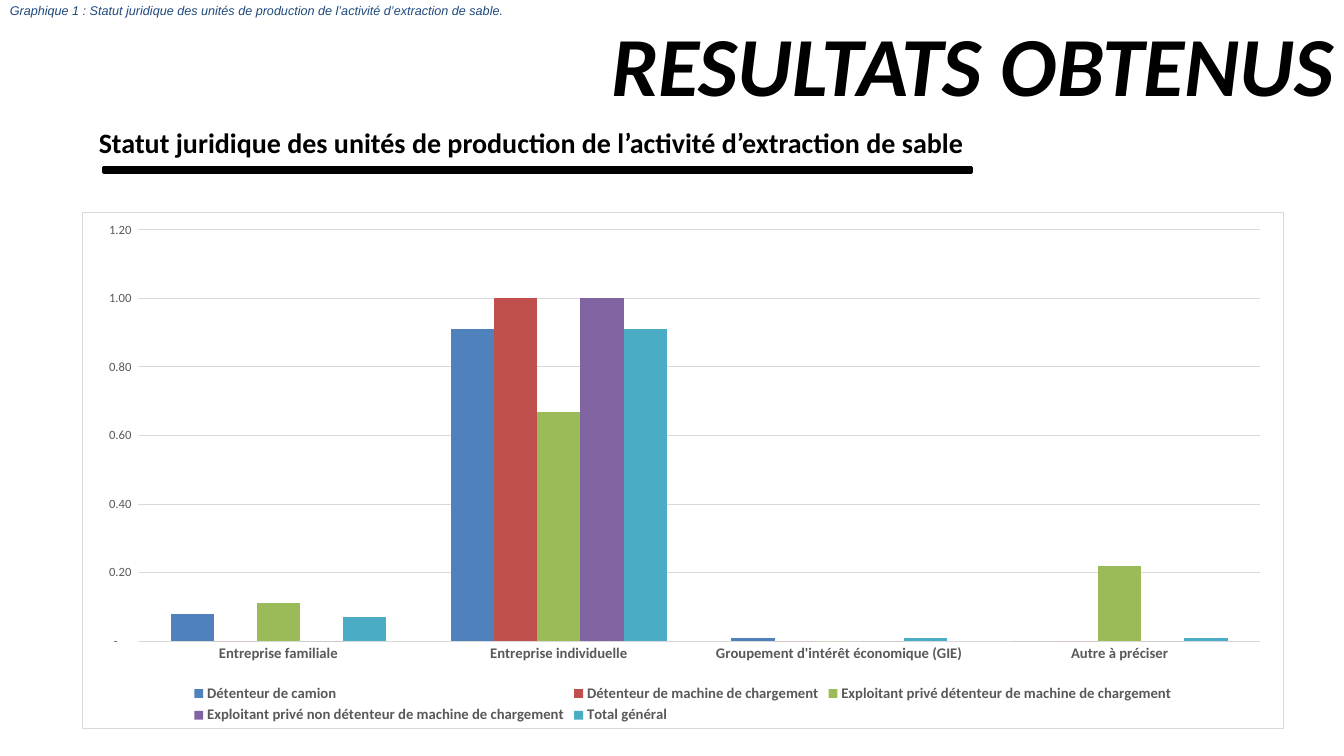
"""Build the slide on the legal status of sand extraction units."""
import pptx
import pptx.util
import pptx.oxml
import pptx.chart.data
import pptx.dml.color
import pptx.enum.chart
import pptx.enum.shapes
import pptx.enum.text

Pt = pptx.util.Pt
Inches = pptx.util.Inches
RGB = pptx.dml.color.RGBColor
Anchor = pptx.enum.text.MSO_ANCHOR
Align = pptx.enum.text.PP_ALIGN

BLACK = RGB(0, 0, 0)
NAVY = RGB(0x1F, 0x49, 0x7D)
GRAY = RGB(0x59, 0x59, 0x59)
PALE = RGB(0xD9, 0xD9, 0xD9)
BLUE = RGB(0x4F, 0x81, 0xBD)
RED = RGB(0xC0, 0x50, 0x4D)
GREEN = RGB(0x9B, 0xBB, 0x59)
PLUM = RGB(0x80, 0x64, 0xA2)
TEAL = RGB(0x4B, 0xAC, 0xC6)

deck = pptx.Presentation()
deck.slide_width = Inches(13.33)
deck.slide_height = Inches(7.5)
slide = deck.slides.add_slide(deck.slide_layouts[6])
shapes = slide.shapes
left = Inches(0.81)


def style(font, size, color, bold=False, italic=False, name="Calibri"):
    font.name, font.size = name, Pt(size)
    font.bold, font.italic = bold, italic
    font.color.rgb = color


def label(text, box, pad, anchor, align, *look):
    frame = shapes.add_textbox(*box).text_frame
    frame.word_wrap = True
    frame.vertical_anchor = anchor
    frame.margin_left = frame.margin_right = Inches(pad)
    frame.margin_top = frame.margin_bottom = 0
    line = frame.paragraphs[0]
    line.alignment = align
    run = line.add_run()
    run.text = text
    style(run.font, *look)


topic = "Statut juridique des unités de production de l’activité d’extraction de sable"
label("RESULTATS OBTENUS", (left, Inches(0.2), deck.slide_width - left, Inches(0.85)),
      0.1, Anchor.MIDDLE, Align.RIGHT, 60, BLACK, True, True)
label(topic, (Inches(0.98), Inches(1.24), Inches(8.66), Inches(0.34)),
      0, Anchor.MIDDLE, Align.LEFT, 20, BLACK, True)
label(f"Graphique 1\u00a0: {topic}.", (0, Inches(0.03), deck.slide_width, Inches(0.15)),
      0.1, Anchor.TOP, Align.LEFT, 9, NAVY, False, True, "Arial")

bar = shapes.add_shape(pptx.enum.shapes.MSO_SHAPE.RECTANGLE,
                       Inches(1.03), Inches(1.66), Inches(8.61), Inches(0.05))
bar.shadow.inherit = False
bar.fill.solid()
bar.fill.fore_color.rgb = BLACK
bar.line.color.rgb = BLACK
bar.line.width = Pt(2)

series = [
    ("Détenteur de camion", (0.08, 0.91, 0.01, 0), BLUE),
    ("Détenteur de machine de chargement", (0, 1, 0, 0), RED),
    ("Exploitant privé détenteur de machine de chargement", (0.11, 0.67, 0, 0.22), GREEN),
    ("Exploitant privé non détenteur de machine de chargement", (0, 1, 0, 0), PLUM),
    ("Total général", (0.07, 0.91, 0.01, 0.01), TEAL),
]
data = pptx.chart.data.CategoryChartData()
data.categories = ["Entreprise familiale", "Entreprise individuelle",
                   "Groupement d'intérêt économique (GIE)", "Autre à préciser"]
for name, vals, color in series:
    data.add_series(name, vals)

chart = shapes.add_chart(pptx.enum.chart.XL_CHART_TYPE.COLUMN_CLUSTERED,
                         left, Inches(2.1), Inches(11.93), Inches(5.13), data).chart
style(chart.font, 10, BLACK)
chart.has_title = False
plot = chart.plots[0]
plot.gap_width = 150
plot.overlap = 0
plot.vary_by_categories = False
for item, (name, vals, color) in zip(plot.series, series):
    item.format.fill.solid()
    item.format.fill.fore_color.rgb = color

chart.has_legend = True
legend = chart.legend
legend.position = pptx.enum.chart.XL_LEGEND_POSITION.BOTTOM
legend.include_in_layout = False
style(legend.font, 10.5, GRAY, True)

cats, vals = chart.category_axis, chart.value_axis
for axis, size, bold in ((cats, 10.5, True), (vals, 9, False)):
    axis.major_tick_mark = axis.minor_tick_mark = pptx.enum.chart.XL_TICK_MARK.NONE
    axis.format.line.fill.background()
    style(axis.tick_labels.font, size, GRAY, bold)
vals.minimum_scale, vals.maximum_scale, vals.major_unit = 0, 1.2, 0.2
vals.has_major_gridlines = True
grid = vals.major_gridlines.format.line
grid.color.rgb = PALE
grid.width = Pt(0.75)
ticks = vals.tick_labels
ticks.number_format = r'_(* #,##0.00_);_(* \(#,##0.00\);_(* "-"??_);_(@_)'
ticks.number_format_is_linked = False

frame = pptx.oxml.parse_xml(
    '<c:spPr xmlns:c="http://schemas.openxmlformats.org/drawingml/2006/chart" '
    'xmlns:a="http://schemas.openxmlformats.org/drawingml/2006/main">'
    '<a:solidFill><a:srgbClr val="FFFFFF"/></a:solidFill>'
    f'<a:ln w="{Pt(0.75)}"><a:solidFill><a:srgbClr val="{PALE}"/></a:solidFill></a:ln>'
    '</c:spPr>')
chart.element.find("{*}txPr").addprevious(frame)

deck.save("out.pptx")
